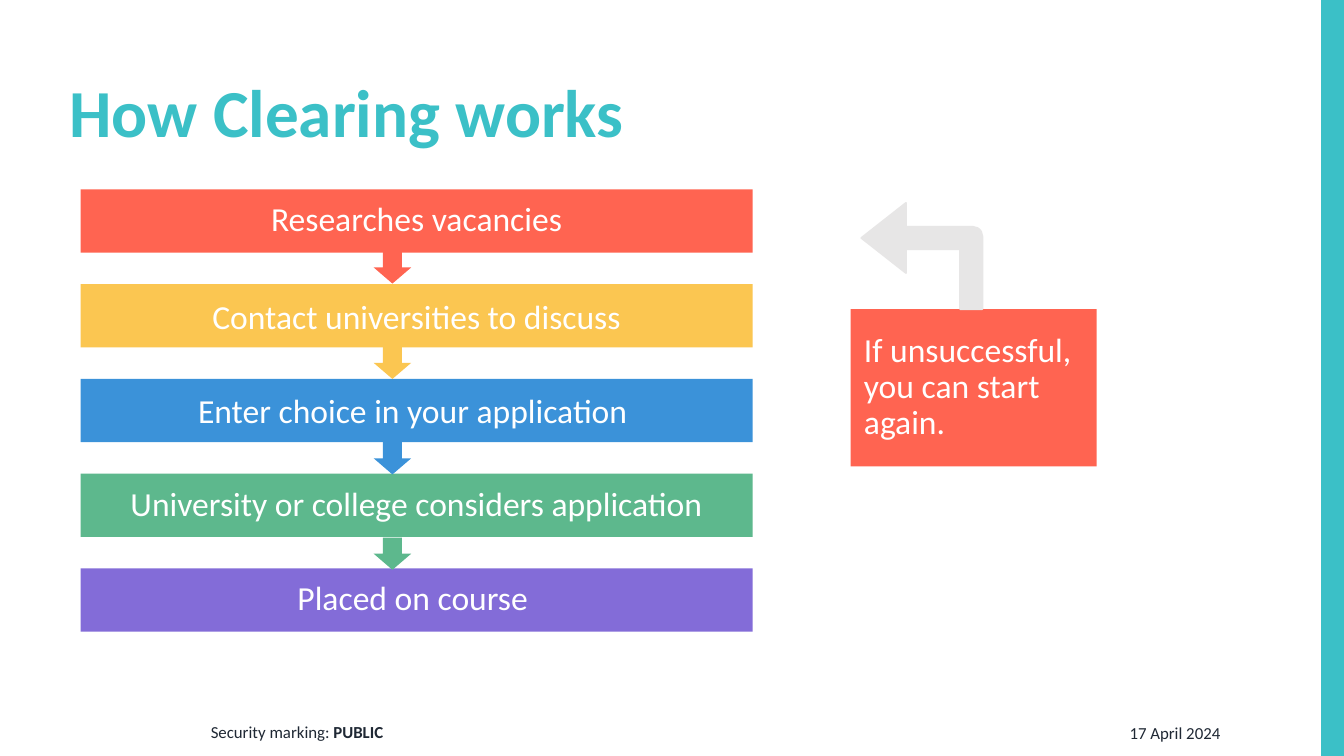
from pptx import Presentation
from pptx import util as u
from pptx.dml.color import RGBColor
from pptx.enum import shapes, text

TEAL, CORAL, GREY, NAVY, WHITE = "3BC0C7", "FF6451", "E7E6E6", "1F2834", "FFFFFF"


def add_block(kind, left, top, width, height, color):
    shape = slide.shapes.add_shape(
        kind, u.Inches(left), u.Inches(top), u.Inches(width), u.Inches(height))
    shape.shadow.inherit = False
    shape.fill.solid()
    shape.fill.fore_color.rgb = RGBColor.from_string(color)
    shape.line.fill.background()
    return shape


def write(shape, words, size, color, align=text.PP_ALIGN.LEFT, spacing=1.0):
    """Fill the shape with one styled paragraph and return it."""
    frame = shape.text_frame
    frame.word_wrap = True
    frame.vertical_anchor = text.MSO_ANCHOR.MIDDLE
    paragraph = frame.paragraphs[0]
    paragraph.alignment = align
    paragraph.line_spacing = spacing
    paragraph.font.name = "Calibri"
    paragraph.font.size = u.Pt(size)
    paragraph.font.color.rgb = RGBColor.from_string(color)
    paragraph.add_run().text = words
    return paragraph


presentation = Presentation()
presentation.slide_width = u.Inches(10)
presentation.slide_height = presentation.slide_width * 9 // 16
slide = presentation.slides.add_slide(presentation.slide_layouts[6])
rectangle = shapes.MSO_SHAPE.RECTANGLE

side_bar = add_block(rectangle, 9.83, 0, 0.17, 5.62, TEAL)
side_bar.height = presentation.slide_height

title = slide.shapes.add_textbox(
    u.Inches(0.42), u.Inches(0.47), u.Inches(5), u.Inches(0.71))
write(title, "How Clearing works", 36, TEAL).font.bold = True

# Steps from top to bottom, each with its line spacing
steps = [
    ("Researches vacancies", CORAL, 0.9),
    ("Contact universities to discuss", "FBC651", 1.0),
    ("Enter choice in your application ", "3B92D9", 1.0),
    ("University or college considers application", "5DB88D", 0.9),
    ("Placed on course ", "836CD8", 0.9),
]
first_top, pitch, step_height = 1.41, 0.705, 0.47
for index, (words, color, spacing) in enumerate(steps):
    step = add_block(rectangle, 0.6, first_top + index * pitch, 5, step_height, color)
    write(step, words, 18, WHITE, text.PP_ALIGN.CENTER, spacing)

retry = add_block(rectangle, 6.33, 2.3, 1.83, 1.17, CORAL)
write(retry, "If unsuccessful, you can start again.", 18, WHITE, spacing=0.9)

for index, (words, color, spacing) in enumerate(steps[:-1]):
    add_block(shapes.MSO_SHAPE.DOWN_ARROW,
              2.78, 1.87 + index * 0.71, 0.28, 0.24, color)

return_arrow = add_block(shapes.MSO_SHAPE.BENT_ARROW, 6.41, 1.51, 0.9, 0.79, GREY)
for index, value in enumerate((0.21, 0.33, 0.42, 0.09)):
    return_arrow.adjustments[index] = value
return_arrow.line.color.rgb = RGBColor.from_string(GREY)
return_arrow.line.width = u.Pt(1)
return_arrow._element.spPr.xfrm.set("flipH", "1")

date = slide.shapes.add_textbox(
    u.Inches(6.52), u.Inches(5.32), u.Inches(2.56), u.Inches(0.26))
date.text_frame.margin_right = 0
write(date, "17 April 2024", 9, NAVY, text.PP_ALIGN.RIGHT)

marking = slide.shapes.add_textbox(
    u.Inches(1.47), u.Inches(5.32), u.Inches(4.9), u.Inches(0.25))
level = write(marking, "Security marking: ", 9, NAVY).add_run()
level.text = "PUBLIC"
level.font.bold = True

presentation.save("out.pptx")
